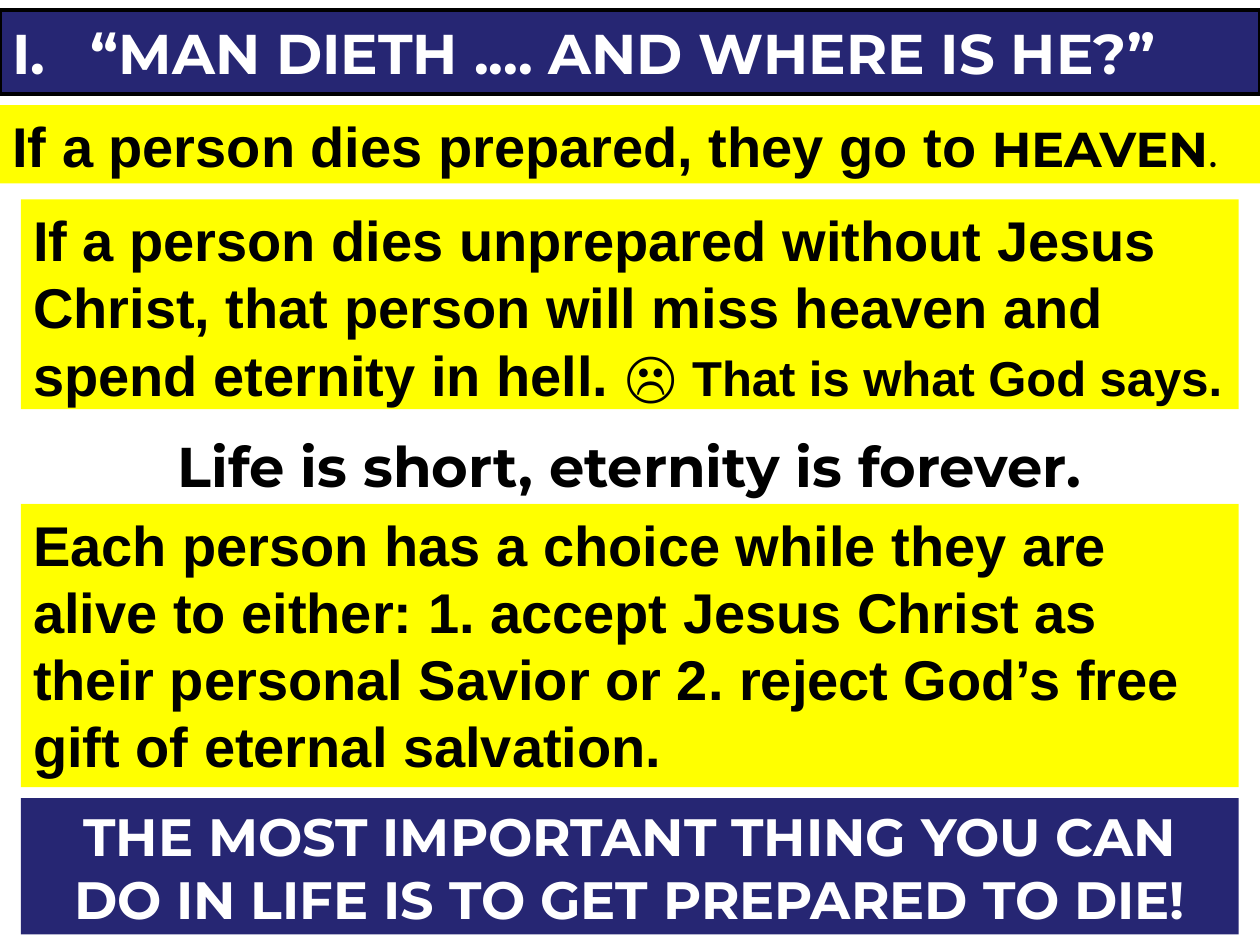
from lxml import etree
from pptx import Presentation
from pptx.dml.color import RGBColor
from pptx.enum.shapes import MSO_SHAPE
from pptx.enum.text import MSO_ANCHOR, PP_ALIGN
from pptx.oxml.ns import qn
from pptx.util import Cm, Pt

RECT = MSO_SHAPE.RECTANGLE
TOP = MSO_ANCHOR.TOP
LEFT, CENTER = PP_ALIGN.LEFT, PP_ALIGN.CENTER
NAVY = RGBColor(0x26, 0x26, 0x73)
YELLOW = RGBColor(0xFF, 0xFF, 0x00)
WHITE = RGBColor(0xFF, 0xFF, 0xFF)
BLACK = RGBColor(0x00, 0x00, 0x00)
BODY, HEAD = "Arial", "Montserrat"
WIDE = (0, 25.4)         # left and width of full-width bands
INNER = (0.42, 24.55)    # left and width of inset bands


def add_run(para, text, size=32, font=BODY, color=BLACK, bold=True):
    run = para.add_run()
    run.text = text
    run.font.size = Pt(size)
    run.font.name = font
    run.font.bold = bold
    run.font.color.rgb = color


class Deck:
    def __init__(self):
        self.prs = Presentation()
        self.prs.slide_width, self.prs.slide_height = Cm(25.4), Cm(19.05)
        self.slide = self.prs.slides.add_slide(self.prs.slide_layouts[6])

    def band(self, span, top, height, fill, align=LEFT, line=None):
        """Add a filled band and return its empty paragraph."""
        left, width = span
        box = self.slide.shapes.add_shape(
            RECT, Cm(left), Cm(top), Cm(width), Cm(height))
        box.shadow.inherit = False
        box.fill.solid()
        box.fill.fore_color.rgb = fill
        if line is None:
            box.line.fill.background()
        else:
            box.line.color.rgb = line
            box.line.width = Pt(2.25)
        frame = box.text_frame
        frame.word_wrap = True
        frame.vertical_anchor = TOP
        para = frame.paragraphs[0]
        para.alignment = align
        return para

    def number(self, para, indent):
        """Give a paragraph a Roman numeral with a hanging indent."""
        props = para._p.get_or_add_pPr()
        props.set("marL", str(Cm(indent)))
        props.set("indent", str(-Cm(indent)))
        etree.SubElement(props, qn("a:buFont"), typeface=HEAD)
        etree.SubElement(props, qn("a:buAutoNum"), type="romanUcPeriod")


def main():
    deck = Deck()

    # Heading
    para = deck.band(WIDE, 0.21, 1.69, NAVY, line=BLACK)
    deck.number(para, 1.58)
    add_run(para, "“MAN DIETH .... AND WHERE IS HE?”", font=HEAD, color=WHITE)
    add_run(para, "\N{NO-BREAK SPACE}", size=33)

    # Prepared
    para = deck.band(WIDE, 2.12, 1.58, YELLOW)
    add_run(para, "If a person dies prepared, they go to")
    add_run(para, " ", size=28)
    add_run(para, "HEAVEN", size=28, font=HEAD)
    add_run(para, ".", size=28, font=HEAD, bold=False)

    # Choice
    para = deck.band(INNER, 10.16, 5.71, YELLOW)
    add_run(para, "Each person has a choice while they are alive to either: "
                  "1. accept Jesus Christ as their personal Savior or "
                  "2. reject God’s free gift of eternal salvation.")

    # Unprepared
    para = deck.band(INNER, 4.02, 4.23, YELLOW)
    add_run(para, "If a person dies unprepared without Jesus Christ, that "
                  "person will miss heaven and spend eternity in hell. ☹ ")
    add_run(para, "That is what God says.", size=28)

    # Motto
    para = deck.band(INNER, 8.57, 1.58, WHITE, CENTER)
    add_run(para, "Life is short, eternity is forever.", font=HEAD)

    # Closing call
    para = deck.band(INNER, 16.09, 2.75, NAVY, CENTER)
    add_run(para, "THE MOST IMPORTANT THING YOU CAN DO IN LIFE IS TO GET "
                  "PREPARED TO DIE!", size=30, font=HEAD, color=WHITE)

    deck.prs.save("out.pptx")


if __name__ == "__main__":
    main()
